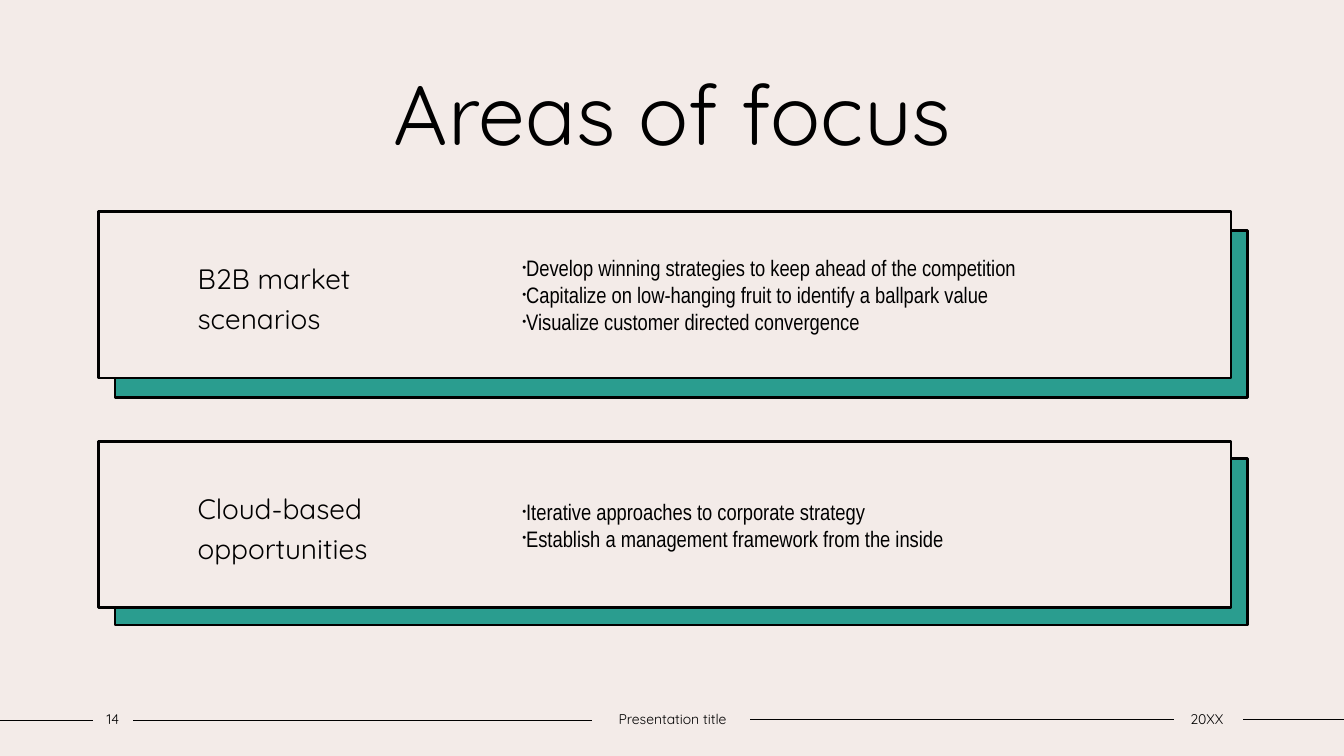
from pptx import Presentation
from pptx import util as u
from pptx.dml.color import RGBColor
from pptx.enum import shapes, text
from pptx.oxml.ns import qn
from lxml import etree

COLORS = {"paper": "F3EBE8", "ink": "000000", "teal": "2A9D8F"}
HEAD_FONT, BODY_FONT = "Quicksand", "Arial Narrow"
TITLE = "Areas of focus"
AREAS = [
    {"top": 2.1, "back_top": 2.29, "name": "B2B market \vscenarios",
     "points": ["Develop winning strategies to keep ahead of the competition",
                "Capitalize on low-hanging fruit to identify a ballpark value",
                "Visualize customer directed convergence"]},
    {"top": 4.38, "back_top": 4.55, "name": "Cloud-based opportunities",
     "points": ["Iterative approaches to corporate strategy",
                "Establish a management framework from the inside"]},
]
FOOTER = [("14", 0.92, 0.4), ("Presentation title", 5.87, 1.6), ("20XX", 11.62, 0.7)]
RULES = [(0, 0.92, 7.15), (1.32, 5.87, 7.15), (7.44, 11.64, 7.14), (12.33, 13.33, 7.14)]
PANEL_LEFT, BACK_LEFT, PANEL_W, PANEL_H = 0.98, 1.14, 11.23, 1.65
POINTS_LEFT, POINTS_W, POINTS_INSET = 5.08, 7.01, 0.1


def rgb(name):
    return RGBColor.from_string(COLORS[name])


def place(sp, *box):
    sp.left, sp.top, sp.width, sp.height = map(u.Inches, box)


def panel(sp, fill):
    sp.fill.solid()
    sp.fill.fore_color.rgb = rgb(fill)
    sp.line.color.rgb = rgb("ink")
    sp.line.width = u.Pt(2)


def write(sp, lines, font, size, align, spacing=1.0, insets=(0.1, 0.1)):
    tf = sp.text_frame
    tf.text = "\n".join(lines)
    tf.word_wrap = True
    tf.auto_size = text.MSO_AUTO_SIZE.NONE
    tf.vertical_anchor = text.MSO_ANCHOR.MIDDLE
    tf.margin_left, tf.margin_right = map(u.Inches, insets)
    tf.margin_top = tf.margin_bottom = u.Inches(0.05)
    for p in tf.paragraphs:
        p.alignment = align
        p.line_spacing = spacing
        p.space_before = p.space_after = u.Pt(0)
        for r in p.runs:
            r.font.name, r.font.size, r.font.bold = font, u.Pt(size), False
            r.font.color.rgb = rgb("ink")


def bullet(p):
    pPr = p._p.get_or_add_pPr()
    pPr.set("marL", "0")
    pPr.set("indent", str(-u.Inches(0.15)))
    etree.SubElement(pPr, qn("a:buSzPct")).set("val", "50000")
    etree.SubElement(pPr, qn("a:buFont")).set("typeface", "Arial")
    etree.SubElement(pPr, qn("a:buChar")).set("char", "•")


def main():
    left, center = text.PP_ALIGN.LEFT, text.PP_ALIGN.CENTER
    prs = Presentation()
    prs.slide_width, prs.slide_height = u.Inches(13.33), u.Inches(7.5)
    s = prs.slides.add_slide(prs.slide_layouts.get_by_name("Comparison"))
    s.background.fill.solid()
    s.background.fill.fore_color.rgb = rgb("paper")

    title, *bodies = s.placeholders
    place(title, 1.25, 0.56, 10.84, 1.11)
    write(title, [TITLE], HEAD_FONT, 60, center)

    for area, name, points in zip(AREAS, bodies[::2], bodies[1::2]):
        back = s.shapes.add_shape(shapes.MSO_SHAPE.RECTANGLE, *map(
            u.Inches, (BACK_LEFT, area["back_top"], PANEL_W, PANEL_H)))
        back.shadow.inherit = False
        panel(back, "teal")
        s.shapes._spTree.insert(2, back._element)

        place(name, PANEL_LEFT, area["top"], PANEL_W, PANEL_H)
        panel(name, "paper")
        write(name, [area["name"]], HEAD_FONT, 20, left, 1.2, (0.98, 7.1))

        place(points, POINTS_LEFT, area["top"] + POINTS_INSET,
              POINTS_W, PANEL_H - 2 * POINTS_INSET)
        write(points, area["points"], BODY_FONT, 16, left)
        for p in points.text_frame.paragraphs:
            bullet(p)

    for x1, x2, y in RULES:
        rule = s.shapes.add_connector(shapes.MSO_CONNECTOR.STRAIGHT,
                                      *map(u.Inches, (x1, y, x2, y)))
        rule.line.color.rgb = rgb("ink")
        rule.line.width = u.Pt(1)
        etree.SubElement(rule._element.spPr, qn("a:effectLst"))

    for label, x, width in FOOTER:
        sp = s.shapes.add_textbox(*map(u.Inches, (x, 7, width, 0.27)))
        write(sp, [label], HEAD_FONT, 10, center, insets=(0, 0))

    prs.save("out.pptx")


if __name__ == "__main__":
    main()
